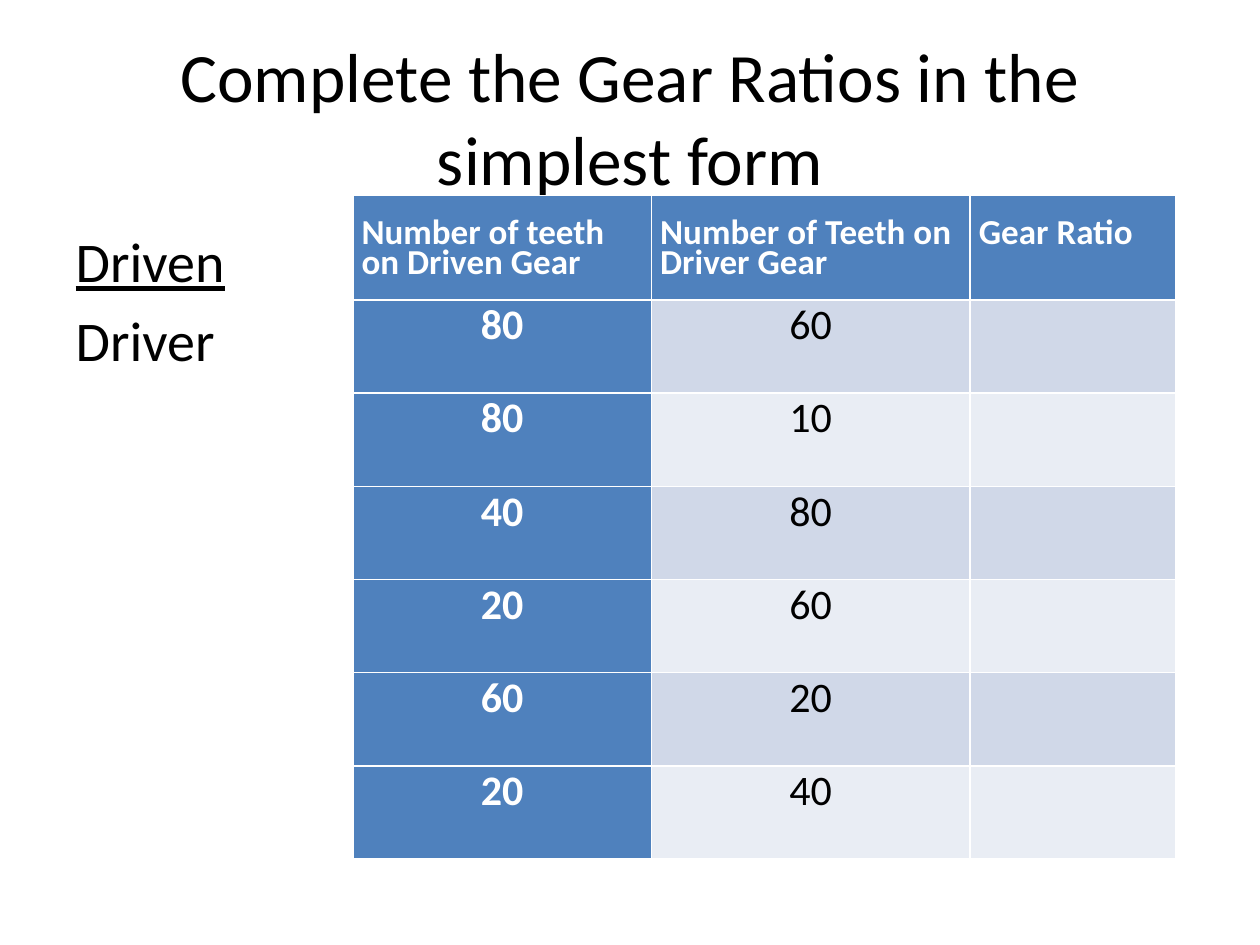
from lxml.etree import SubElement
from pptx import Presentation
from pptx.dml.color import RGBColor
from pptx.enum.text import MSO_ANCHOR, MSO_AUTO_SIZE, PP_ALIGN
from pptx.oxml.ns import qn
from pptx.util import Inches, Pt

TITLE = "Complete the Gear Ratios in the simplest form"
FRACTION = [("Driven", True), ("Driver", False)]
HEADINGS = ["Number of teeth on Driven Gear", "Number of Teeth on Driver Gear", "Gear Ratio"]
TEETH = [(80, 60), (80, 10), (40, 80), (20, 60), (60, 20), (20, 40)]
COLUMN_WIDTHS = [2.37, 2.53, 1.63]
HEADING_HEIGHT, ROW_HEIGHT = 0.83, 0.74
COLORS = {"text": "000000", "light": "FFFFFF", "heading": "4F81BD",
          "odd": "D0D8E8", "even": "E9EDF4"}


def place(shape, left, top, width, height):
    shape.left, shape.top = Inches(left), Inches(top)
    shape.width, shape.height = Inches(width), Inches(height)


def add_span(para, text, size, color="text", bold=False, underline=False):
    span = para.add_run()
    span.text = text
    span.font.name = "Calibri"
    span.font.size = Pt(size)
    span.font.bold = bold
    span.font.underline = underline
    span.font.color.rgb = RGBColor.from_string(COLORS[color])


def fill_cell(cell, color):
    cell.fill.solid()
    cell.fill.fore_color.rgb = RGBColor.from_string(COLORS[color])
    cell.margin_left = cell.margin_right = Inches(0.07)
    cell.margin_top = cell.margin_bottom = 0


def add_title(page):
    title = page.shapes.title
    place(title, 0.5, 0.3, 9, 1.25)
    frame = title.text_frame
    frame.auto_size = MSO_AUTO_SIZE.NONE
    frame.vertical_anchor = MSO_ANCHOR.MIDDLE
    para = frame.paragraphs[0]
    para.alignment = PP_ALIGN.CENTER
    add_span(para, TITLE, 39.6)


def add_fraction(page):
    body = page.placeholders[1]
    place(body, 0.5, 1.75, 9, 4.95)
    frame = body.text_frame
    for index, (word, underline) in enumerate(FRACTION):
        para = frame.add_paragraph() if index else frame.paragraphs[0]
        props = para._p.get_or_add_pPr()
        props.set("marL", "0")
        props.set("indent", "0")
        SubElement(props, qn("a:buNone"))
        add_span(para, word, 32, underline=underline)


def add_gear_table(page):
    height = HEADING_HEIGHT + ROW_HEIGHT * len(TEETH)
    table = page.shapes.add_table(
        len(TEETH) + 1, len(HEADINGS), Inches(2.8), Inches(1.55),
        Inches(sum(COLUMN_WIDTHS)), Inches(height)).table
    table.first_col = True
    for column, width in zip(table.columns, COLUMN_WIDTHS):
        column.width = Inches(width)
    for index, row in enumerate(table.rows):
        row.height = Inches(ROW_HEIGHT if index else HEADING_HEIGHT)

    for cell, heading in zip(table.rows[0].cells, HEADINGS):
        fill_cell(cell, "heading")
        cell.margin_top = Pt(16.8)
        para = cell.text_frame.paragraphs[0]
        para.line_spacing = Pt(16.8)
        add_span(para, heading, 20, "light", bold=True)

    for index, counts in enumerate(TEETH, 1):
        band = "odd" if index % 2 else "even"
        driven, driver, ratio = table.rows[index].cells
        fill_cell(driven, "heading")
        fill_cell(driver, band)
        fill_cell(ratio, band)
        for cell, count in zip((driven, driver), counts):
            para = cell.text_frame.paragraphs[0]
            para.alignment = PP_ALIGN.CENTER
            is_driven = cell is driven
            add_span(para, str(count), 24, "light" if is_driven else "text", bold=is_driven)


def main():
    deck = Presentation()
    deck.slide_width, deck.slide_height = Inches(10), Inches(7.5)
    page = deck.slides.add_slide(deck.slide_layouts[1])
    add_title(page)
    add_fraction(page)
    add_gear_table(page)
    deck.save("out.pptx")


if __name__ == "__main__":
    main()
